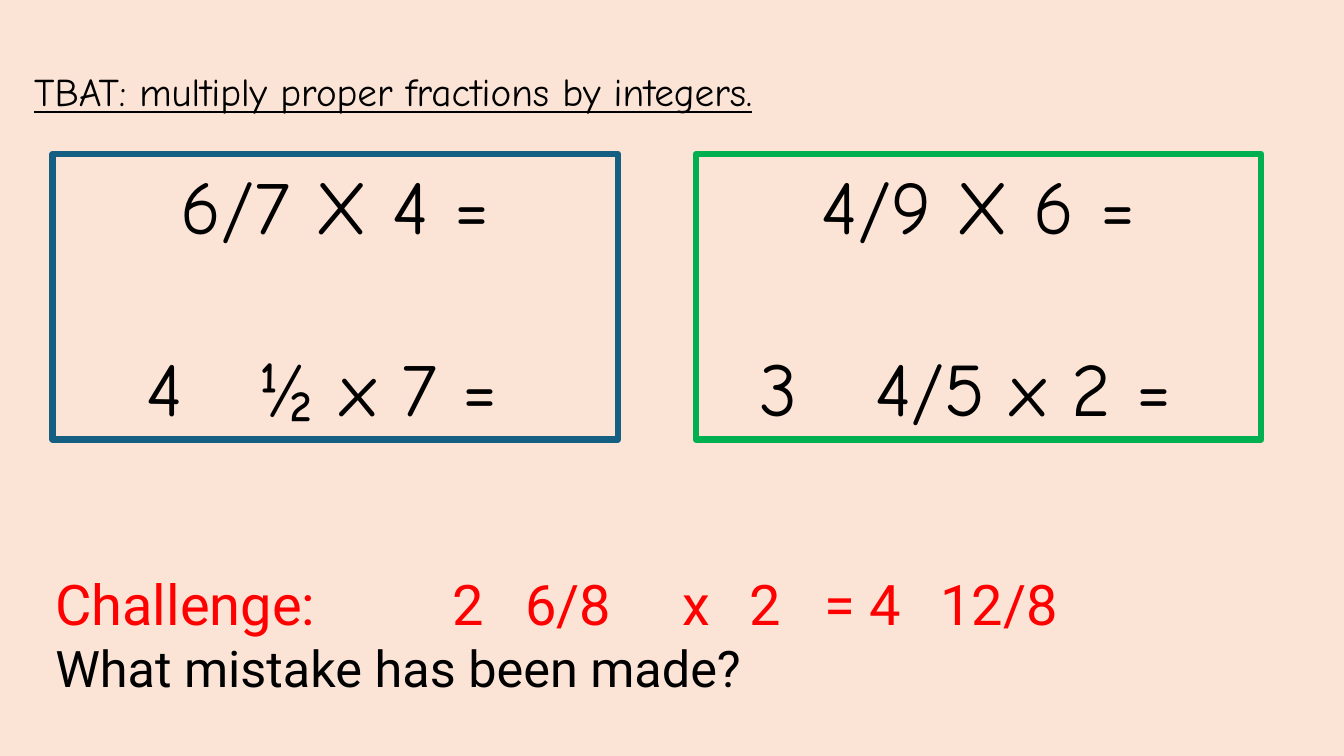
from pptx import Presentation
from pptx import util as u
from pptx.dml import color
from pptx.enum import shapes, text
from pptx.oxml import ns
from lxml import etree


def rgb(code):
    return color.RGBColor.from_string(code)


class Lesson:
    """Builds a maths lesson page with one shared style."""

    hand, plain = "Comic Neue", "Roboto"
    ink, alert, paper = "000000", "FF0000", "FBE3D6"

    def __init__(self):
        self.deck = Presentation()
        self.deck.slide_width = u.Inches(13.33)
        self.deck.slide_height = u.Inches(7.5)
        self.page = self.deck.slides.add_slide(self.deck.slide_layouts[6])
        fill = self.page.background.fill
        fill.solid()
        fill.fore_color.rgb = rgb(self.paper)

    def set_line(self, para, words, size, font, ink, tabs=()):
        para.text = words
        if tabs:
            stops = etree.SubElement(para._p.get_or_add_pPr(), ns.qn("a:tabLst"))
            for stop in tabs:
                etree.SubElement(stops, ns.qn("a:tab"), pos=str(u.Inches(stop)), algn="l")
        para.font.size = u.Pt(size)
        para.font.name = font
        para.font.color.rgb = rgb(ink)
        return para

    def text_box(self, left, top, width, height):
        box = self.page.shapes.add_textbox(*map(u.Inches, (left, top, width, height)))
        box.text_frame.word_wrap = True
        return box.text_frame

    def title(self, words):
        frame = self.text_box(0.21, 0.14, 12.94, 1.52)
        frame.margin_left = frame.margin_right = u.Inches(0.13)
        frame.margin_top = u.Inches(0.53)
        para = self.set_line(frame.paragraphs[0], words, 28, self.hand, self.ink)
        para.font.underline = True

    def sum_box(self, left, line, first, second, tabs):
        box = self.page.shapes.add_shape(
            shapes.MSO_SHAPE.RECTANGLE, *map(u.Inches, (left, 1.53, 5.61, 2.83)))
        box.shadow.inherit = False
        box.fill.background()
        box.line.color.rgb = rgb(line)
        box.line.width = u.Pt(4.5)
        frame = box.text_frame
        frame.word_wrap = True
        frame.vertical_anchor = text.MSO_ANCHOR.TOP
        para = self.set_line(frame.paragraphs[0], first, 54, self.hand, self.ink)
        para.alignment = text.PP_ALIGN.CENTER
        para = self.set_line(frame.add_paragraph(), second, 54, self.hand, self.ink, tabs)
        para.alignment = text.PP_ALIGN.LEFT
        para.space_before = u.Pt(65)

    def challenge(self, sum_line, tabs, question):
        frame = self.text_box(0.45, 5.6, 11.86, 1.38)
        self.set_line(frame.paragraphs[0], sum_line, 40, self.plain, self.alert, tabs)
        self.set_line(frame.add_paragraph(), question, 36, self.plain, self.ink)


def main():
    lesson = Lesson()
    lesson.sum_box(0.52, "156082", "6/7 X 4 =", "\t4\t½ x 7 =", (0.83, 1.95))
    lesson.title("TBAT: multiply proper fractions by integers.")
    lesson.sum_box(6.9, "00B050", "4/9 X 6 =", "\t3\t4/5 x 2 =", (0.53, 1.68))
    lesson.challenge("Challenge:\t2\t6/8\tx\t2\t= 4\t12/8",
                     (3.94, 4.66, 6.22, 6.89, 7.63, 8.78),
                     "What mistake has been made?")
    lesson.deck.save("out.pptx")


if __name__ == "__main__":
    main()
